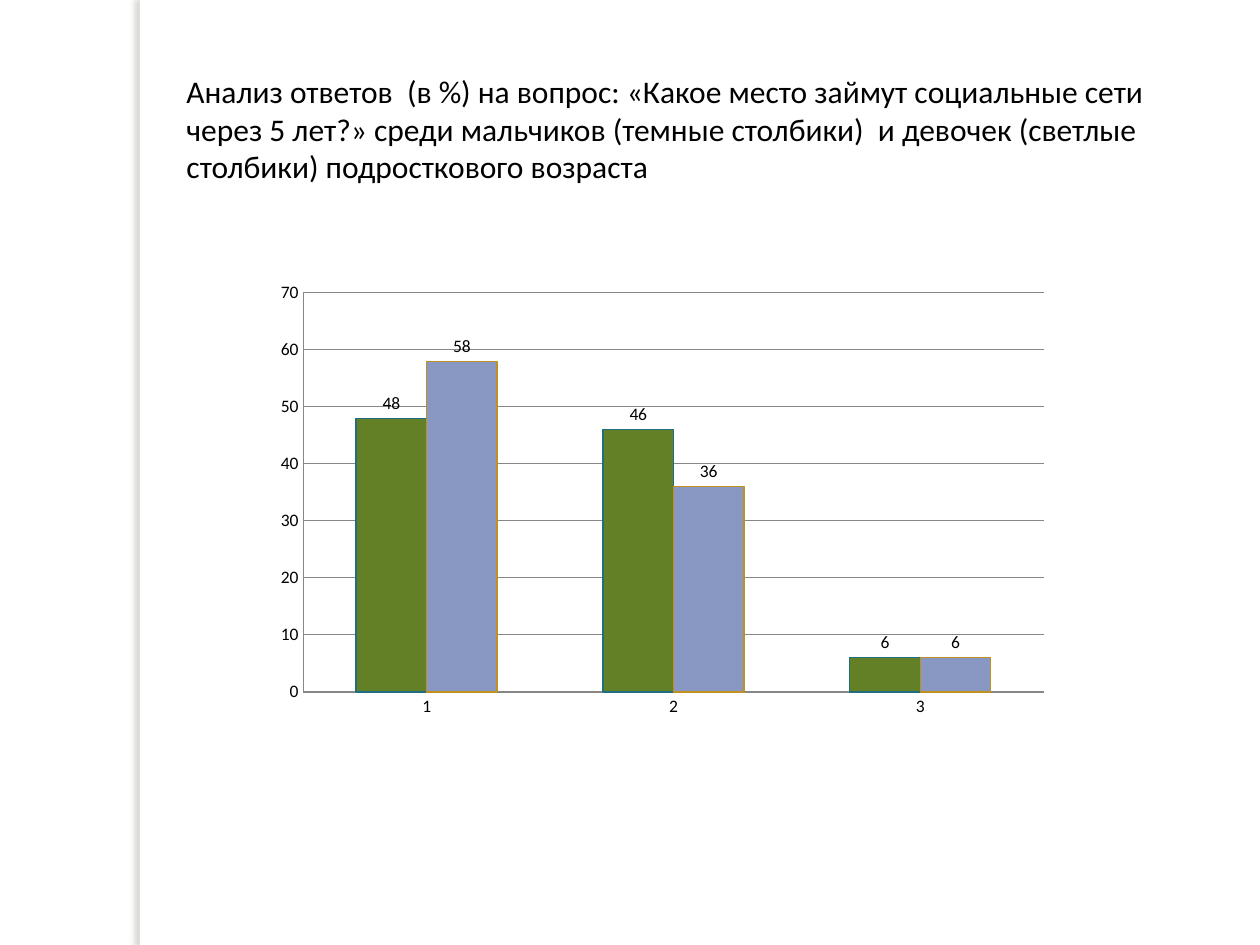
from dataclasses import dataclass

from lxml.etree import SubElement
from pptx import Presentation
from pptx.chart.data import CategoryChartData
from pptx.dml.color import RGBColor
from pptx.enum.chart import XL_CHART_TYPE, XL_LABEL_POSITION, XL_TICK_MARK
from pptx.enum.shapes import MSO_SHAPE
from pptx.enum.text import MSO_ANCHOR, PP_ALIGN
from pptx.oxml import parse_xml
from pptx.oxml.ns import nsdecls, qn
from pptx.util import Emu, Pt

PX = 9144  # EMU per px, 100 px to the inch
FONT = "Calibri"
BLACK = RGBColor(0x00, 0x00, 0x00)
WHITE = RGBColor(0xFF, 0xFF, 0xFF)
GREEN = RGBColor(0x63, 0x80, 0x26)
BLUE = RGBColor(0x88, 0x98, 0xC3)
TEAL = RGBColor(0x1F, 0x6F, 0x80)
GOLD = RGBColor(0xC0, 0x90, 0x20)
GREY = RGBColor(0x87, 0x87, 0x87)
SHADOW = RGBColor(0x73, 0x6F, 0x63)

TITLE = ("Анализ ответов  (в %) на вопрос: «Какое место займут социальные сети "
         "через 5 лет?» среди мальчиков (темные столбики)  и девочек "
         "(светлые столбики) подросткового возраста")


@dataclass
class Bars:
    name: str
    values: tuple[int, ...]
    fill: RGBColor
    outline: RGBColor


CATEGORIES = ("1", "2", "3")
SERIES = (
    Bars("Series 1", (48, 46, 6), GREEN, TEAL),
    Bars("Series 2", (58, 36, 6), BLUE, GOLD),
)


def px(*lengths: int) -> list[Emu]:
    return [Emu(length * PX) for length in lengths]


def apply(target, values: dict) -> None:
    for name, value in values.items():
        setattr(target, name, value)


def style_font(font, size: int) -> None:
    apply(font, {"name": FONT, "size": Pt(size), "bold": False})
    font.color.rgb = BLACK


def style_line(line, color: RGBColor) -> None:
    line.color.rgb = color
    line.width = Pt(0.75)


def add_side_strip(page) -> None:
    strip = page.shapes.add_shape(MSO_SHAPE.RECTANGLE, *px(111, 0, 8, 750))
    strip.fill.solid()
    strip.fill.fore_color.rgb = WHITE
    strip.line.fill.background()
    strip.shadow.inherit = False
    effects = strip.element.spPr.find(qn("a:effectLst"))
    shadow = SubElement(effects, qn("a:outerShdw"), blurRad=str(Pt(3)),
                        dist=str(Pt(3)), dir="10800000", rotWithShape="0")
    color = SubElement(shadow, qn("a:srgbClr"), val=str(SHADOW))
    SubElement(color, qn("a:alpha"), val="25000")


def add_title(page) -> None:
    box = page.shapes.title
    apply(box, dict(zip(("left", "top", "width", "height"), px(138, 52, 843, 101))))
    frame = box.text_frame
    frame.text = TITLE
    apply(frame, {"word_wrap": True, "vertical_anchor": MSO_ANCHOR.TOP})
    para = frame.paragraphs[0]
    apply(para, {"alignment": PP_ALIGN.LEFT, "line_spacing": 1.0, "space_before": Pt(0)})
    style_font(para.runs[0].font, 18)


def place_plot(chart, **fractions: float) -> None:
    """Fix the inner plot area as fractions of the chart."""
    area = chart.element.find(".//" + qn("c:plotArea"))
    for old in area.findall(qn("c:layout")):
        area.remove(old)
    sizes = "".join(f'<c:{key} val="{value}"/>' for key, value in fractions.items())
    area.insert(0, parse_xml(
        f'<c:layout {nsdecls("c")}><c:manualLayout><c:layoutTarget val="inner"/>'
        f'<c:xMode val="edge"/><c:yMode val="edge"/>{sizes}'
        '</c:manualLayout></c:layout>'))


def add_answer_chart(page) -> None:
    data = CategoryChartData(number_format="General")
    data.categories = CATEGORIES
    for bars in SERIES:
        data.add_series(bars.name, bars.values)
    chart = page.shapes.add_chart(
        XL_CHART_TYPE.COLUMN_CLUSTERED, *px(209, 218, 632, 360), data).chart
    apply(chart, {"has_legend": False, "has_title": False})
    style_font(chart.font, 10)
    place_plot(chart, x=0.05, y=0.04, w=0.93, h=0.88)

    # Axes and gridlines
    for axis in (chart.category_axis, chart.value_axis):
        apply(axis, {"major_tick_mark": XL_TICK_MARK.NONE,
                     "minor_tick_mark": XL_TICK_MARK.NONE})
        style_line(axis.format.line, GREY)
    apply(chart.value_axis, {"minimum_scale": 0, "maximum_scale": 70,
                             "major_unit": 10, "has_major_gridlines": True})
    style_line(chart.value_axis.major_gridlines.format.line, GREY)

    # Columns and value labels
    plot = chart.plots[0]
    apply(plot, {"gap_width": 150, "overlap": 0, "vary_by_categories": False})
    for series, bars in zip(plot.series, SERIES):
        series.format.fill.solid()
        series.format.fill.fore_color.rgb = bars.fill
        style_line(series.format.line, bars.outline)
        labels = series.data_labels
        apply(labels, {"show_value": True, "position": XL_LABEL_POSITION.OUTSIDE_END})
        style_font(labels.font, 10)


def main() -> None:
    deck = Presentation()
    deck.slide_width, deck.slide_height = px(1000, 750)
    page = deck.slides.add_slide(deck.slide_layouts[5])
    page.background.fill.solid()
    page.background.fill.fore_color.rgb = WHITE
    add_side_strip(page)
    add_title(page)
    add_answer_chart(page)
    deck.save("out.pptx")


if __name__ == "__main__":
    main()
